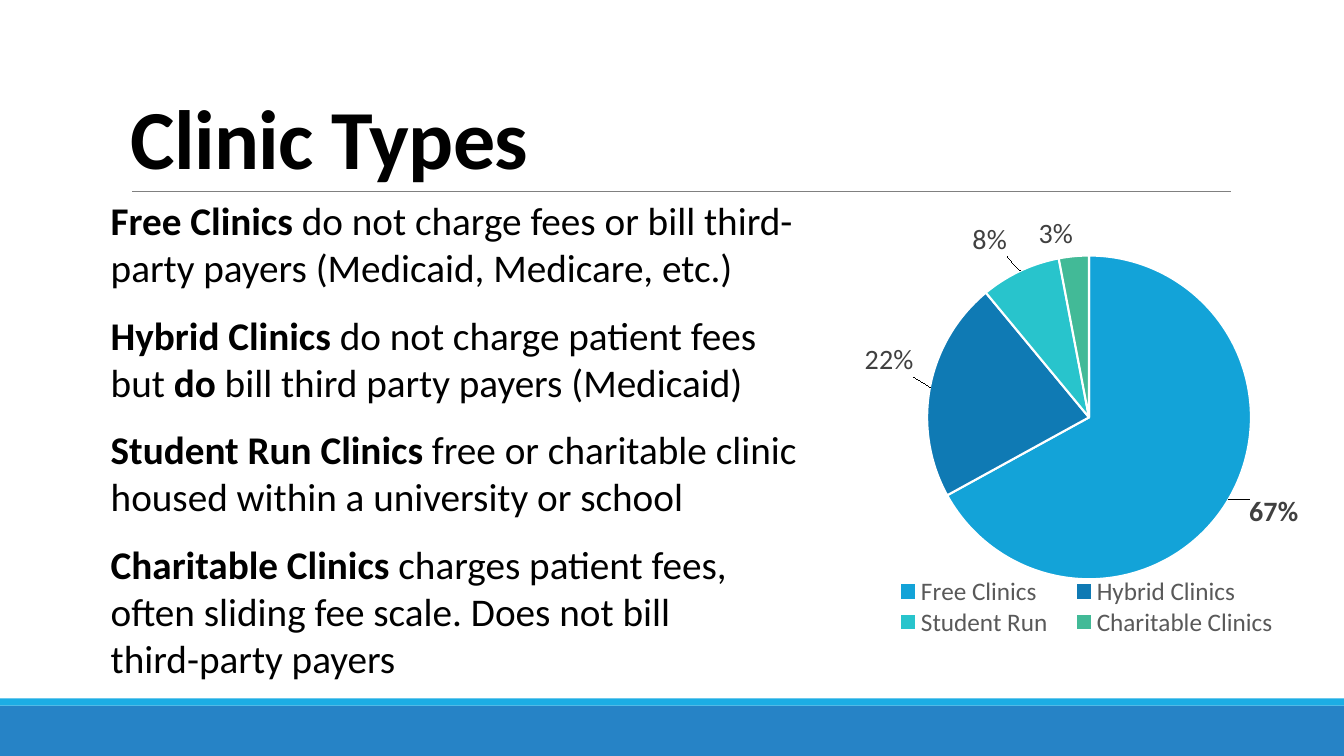
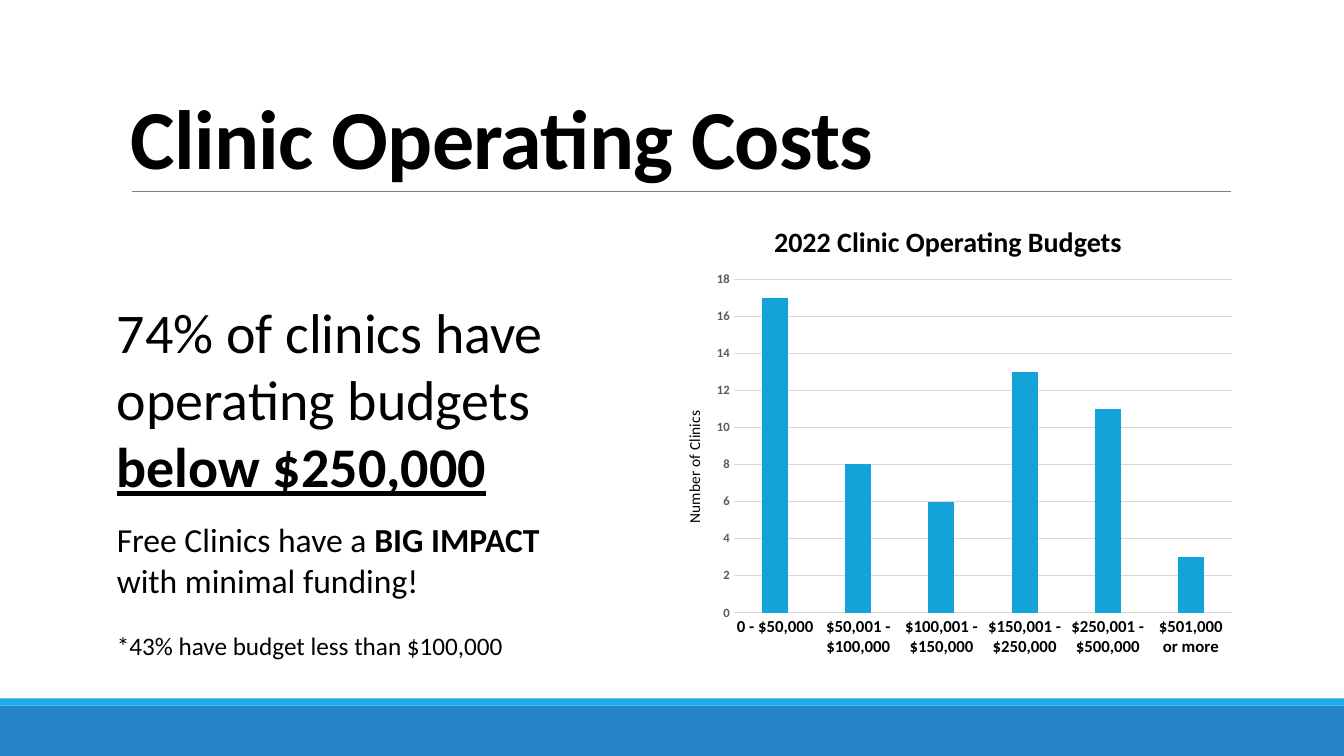
import pptx
import pptx.chart.data
import pptx.dml.color
import pptx.enum.chart
import pptx.enum.shapes
import pptx.enum.text
import pptx.oxml
import pptx.oxml.ns
import pptx.util

Inches = pptx.util.Inches
Pt = pptx.util.Pt
FONT = "Calibri"
BLACK = "000000"
WHITE = "FFFFFF"
BAND_BLUE = "2683C6"
BAND_CYAN = "1CADE4"
RULE_GREY = "808080"
GRID_GREY = "D9D9D9"
LABEL_GREY = "404040"
TEXT_GREY = "595959"
CHART_BLUE = "13A3D8"
PIE_COLORS = [CHART_BLUE, "0F7AB4", "28C4CC", "42BA97"]
PARA_GAP = 14.6


def color(value):
    return pptx.dml.color.RGBColor.from_string(value)


def paint(target, value):
    target.fill.solid()
    target.fill.fore_color.rgb = color(value)


def style_line(line, value, width):
    line.color.rgb = color(value)
    line.width = Pt(width)


def style_font(font, size=28, fill=BLACK, bold=False, underline=False):
    font.name = FONT
    font.size = Pt(size)
    font.bold = bold
    font.underline = underline
    font.color.rgb = color(fill)


def add_span(para, text, spacing=None, **style):
    span = para.add_run()
    span.text = text
    style_font(span.font, **style)
    if spacing is not None:
        span.font._element.set("spc", str(round(spacing * 100)))


def add_para(box, spans, gap=0, align=None, leading=None):
    frame = box.text_frame
    para = frame.paragraphs[0] if not frame.text else frame.add_paragraph()
    if gap:
        para.space_before = Pt(gap)
    if align is not None:
        para.alignment = align
    if leading is not None:
        para.line_spacing = leading
    for text, style in spans:
        add_span(para, text, **style)


def add_box(page, left, top, width, height, anchor=pptx.enum.text.MSO_ANCHOR.TOP):
    box = page.shapes.add_textbox(Inches(left), Inches(top), Inches(width), Inches(height))
    box.text_frame.word_wrap = True
    box.text_frame.vertical_anchor = anchor
    return box


def add_band(page, top, height, fill):
    band = page.shapes.add_shape(
        pptx.enum.shapes.MSO_SHAPE.RECTANGLE, 0, Inches(top), Inches(13.33), Inches(height))
    band.shadow.inherit = False
    paint(band, fill)
    band.line.fill.background()


def add_rule(page, left, right, top):
    rule = page.shapes.add_connector(
        pptx.enum.shapes.MSO_CONNECTOR.STRAIGHT,
        Inches(left), Inches(top), Inches(right), Inches(top))
    style_line(rule.line, RULE_GREY, 0.5)
    properties = rule._element.spPr
    properties.append(properties.makeelement(pptx.oxml.ns.qn("a:effectLst"), {}))


def add_page(deck, title):
    page = deck.slides.add_slide(deck.slide_layouts[6])
    add_band(page, 7, 0.5, BAND_BLUE)
    add_band(page, 6.93, 0.07, BAND_CYAN)
    add_rule(page, 1.31, 12.21, 1.9)
    box = add_box(page, 1.2, 0.31, 11, 1.59, pptx.enum.text.MSO_ANCHOR.BOTTOM)
    add_para(box, [(title, dict(size=60, bold=True, spacing=-0.5))], leading=0.85)
    return page


def add_chart(page, kind, area, categories, values, number_format):
    data = pptx.chart.data.CategoryChartData(number_format=number_format)
    data.categories = categories
    data.add_series("Series 1", values)
    chart = page.shapes.add_chart(kind, *map(Inches, area), data).chart
    chart.has_title = False
    chart.has_legend = False
    style_font(chart.font, size=10)
    return chart


def place(chart, path_to_part, after=None, inner=False, edge=True, **fractions):
    part = chart._chartSpace.xpath(path_to_part)[0]
    for old in part.findall(pptx.oxml.ns.qn("c:layout")):
        part.remove(old)
    settings = {"layoutTarget": "inner"} if inner else {}
    if edge:
        settings.update(xMode="edge", yMode="edge")
    settings.update(fractions)
    body = "".join(f'<c:{name} val="{value}"/>' for name, value in settings.items())
    layout = pptx.oxml.parse_xml(
        f'<c:layout {pptx.oxml.ns.nsdecls("c")}><c:manualLayout>{body}</c:manualLayout></c:layout>')
    if after:
        part.find(pptx.oxml.ns.qn(after)).addnext(layout)
    else:
        part.insert(0, layout)


def add_type_pie(page):
    chart = add_chart(
        page, pptx.enum.chart.XL_CHART_TYPE.PIE, (8.16, 2, 5.18, 4.37),
        ["Free Clinics", "Hybrid Clinics", "Student Run", "Charitable Clinics"],
        [0.67, 0.22, 0.08, 0.03], "0%")
    outside = pptx.enum.chart.XL_LABEL_POSITION.OUTSIDE_END
    chart.plots[0].vary_by_categories = True
    series = chart.plots[0].series[0]
    labels = series.data_labels
    labels.show_value = True
    labels.number_format = "0%"
    labels.number_format_is_linked = False
    labels.position = outside
    style_font(labels.font, size=20, fill=LABEL_GREY)
    for index, fill in enumerate(PIE_COLORS):
        point = series.points[index]
        paint(point.format, fill)
        style_line(point.format.line, WHITE, 1.5)
    for index, (x, y) in enumerate([(0.03, -0.02), (-0.02, -0.02), (-0.02, -0.02)]):
        label = series.points[index].data_label
        style_font(label.font, size=20, fill=LABEL_GREY, bold=index == 0)
        label.position = outside
        place(chart, f"//c:dLbl[c:idx/@val={index}]", "c:idx", edge=False, x=x, y=y)
    chart.has_legend = True
    chart.legend.position = pptx.enum.chart.XL_LEGEND_POSITION.BOTTOM
    chart.legend.include_in_layout = False
    style_font(chart.legend.font, size=18, fill=TEXT_GREY)
    place(chart, "//c:legend", "c:legendPos", x=0.11, y=0.85, w=0.79, h=0.14)
    place(chart, "//c:plotArea", inner=True, x=0.2, y=0.12, w=0.62, h=0.74)


def add_budget_columns(page):
    chart = add_chart(
        page, pptx.enum.chart.XL_CHART_TYPE.COLUMN_CLUSTERED, (6.52, 2.61, 5.82, 3.99),
        ["0 - $50,000", "$50,001 - $100,000", "$100,001 - $150,000",
         "$150,001 - $250,000", "$250,001 - $500,000", "$501,000 or more"],
        [17, 8, 6, 13, 11, 3], "0")
    plot = chart.plots[0]
    plot.vary_by_categories = False
    plot.gap_width = 219
    plot.overlap = -27
    paint(plot.series[0].format, CHART_BLUE)
    for axis, size, fill in ((chart.category_axis, 12, BLACK), (chart.value_axis, 9, TEXT_GREY)):
        axis.major_tick_mark = pptx.enum.chart.XL_TICK_MARK.NONE
        axis.minor_tick_mark = pptx.enum.chart.XL_TICK_MARK.NONE
        style_font(axis.tick_labels.font, size=size, fill=fill, bold=True)
    style_line(chart.category_axis.format.line, GRID_GREY, 0.75)
    counts = chart.value_axis
    counts.format.line.fill.background()
    counts.minimum_scale = 0
    counts.maximum_scale = 18
    counts.major_unit = 2
    counts.tick_labels.number_format = "0"
    counts.tick_labels.number_format_is_linked = False
    style_line(counts.major_gridlines.format.line, GRID_GREY, 0.75)
    frame = counts.axis_title.text_frame
    add_span(frame.paragraphs[0], "Number of Clinics", size=11)
    frame._txBody.bodyPr.set("rot", "-5400000")
    frame._txBody.bodyPr.set("vert", "horz")
    place(chart, "//c:valAx/c:title", "c:tx", x=0.04, y=0.36)
    place(chart, "//c:plotArea", inner=True, x=0.13, y=0.04, w=0.85, h=0.83)


def build_types(deck):
    page = add_page(deck, "Clinic Types")
    box = add_box(page, 1, 1.9, 7.16, 5.92)
    bold = dict(bold=True)
    add_para(box, [
        ("Free Clinics ", bold),
        ("do not charge fees or bill third-party payers (Medicaid, Medicare, etc.)", {})])
    add_para(box, [
        ("Hybrid Clinics ", bold), ("do not charge patient fees but ", {}),
        ("do", bold), (" bill third party payers (Medicaid)", {})], gap=PARA_GAP)
    add_para(box, [
        ("Student Run Clinics", bold),
        (" free or charitable clinic housed within a university or school", {})], gap=PARA_GAP)
    add_para(box, [
        ("Charitable Clinics", bold),
        (" charges patient fees, often sliding fee scale. Does not bill", {})], gap=PARA_GAP)
    add_para(box, [("third-party payers", {})])
    add_type_pie(page)


def build_costs(deck):
    page = add_page(deck, "Clinic Operating Costs")
    add_budget_columns(page)
    heading = add_box(page, 7.4, 2.18, 4.07, 0.44)
    add_para(heading, [("2022 Clinic Operating Budgets ", dict(size=20, bold=True))],
             align=pptx.enum.text.PP_ALIGN.CENTER)
    message = add_box(page, 1.06, 2.9, 4.61, 3.13)
    add_para(message, [
        ("74% of clinics have operating budgets ", dict(size=40)),
        ("below $250,000", dict(size=40, bold=True, underline=True))])
    add_para(message, [
        ("Free Clinics have a ", dict(size=24)), ("BIG IMPACT", dict(size=24, bold=True)),
        (" with minimal funding!", dict(size=24))], gap=PARA_GAP)
    footnote = add_box(page, 1.06, 6.2, 4.18, 0.4)
    add_para(footnote, [("*43% have budget less than $100,000", dict(size=18))])


def main():
    deck = pptx.Presentation()
    deck.slide_width = Inches(13.33)
    deck.slide_height = Inches(7.5)
    build_types(deck)
    build_costs(deck)
    deck.save("out.pptx")


if __name__ == "__main__":
    main()
